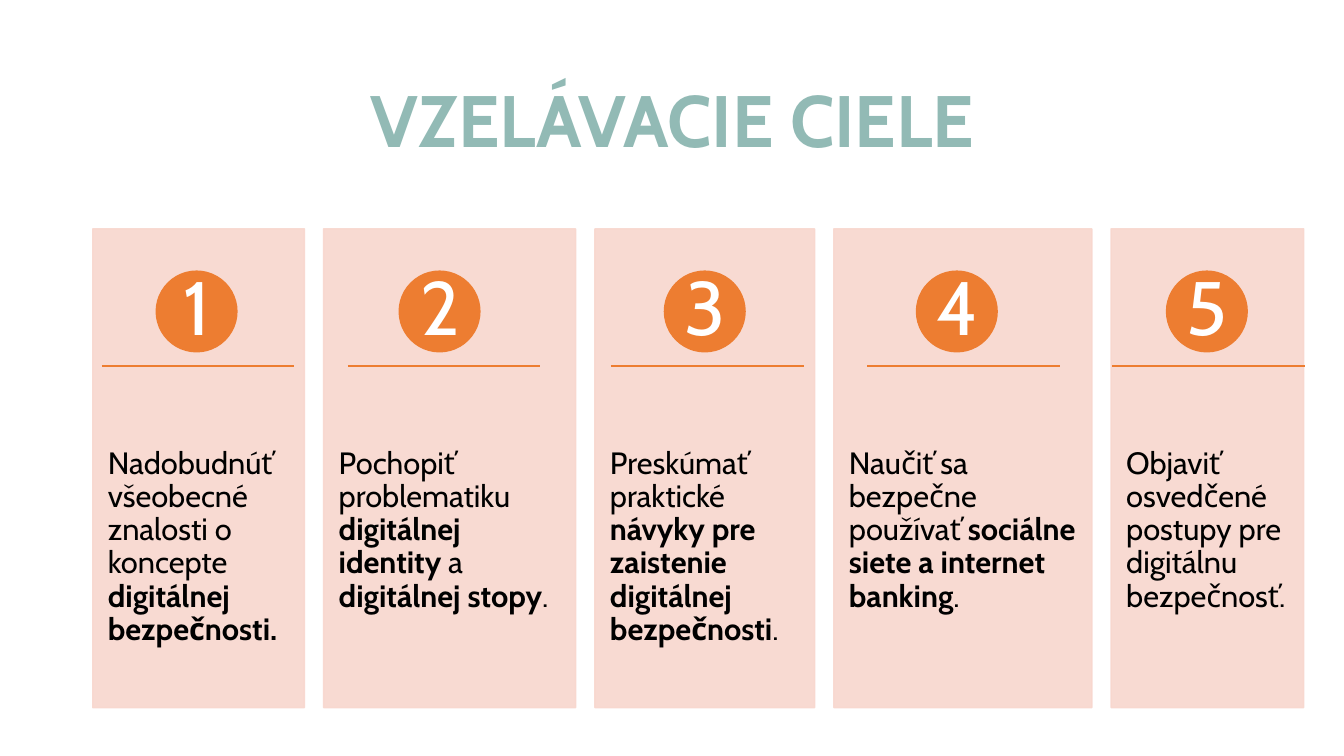
from lxml.etree import SubElement
from pptx import Presentation
from pptx.dml.color import RGBColor
from pptx.enum.shapes import MSO_CONNECTOR, MSO_SHAPE
from pptx.enum.text import MSO_ANCHOR, PP_ALIGN
from pptx.oxml.ns import qn
from pptx.util import Inches, Pt

COLORS = {"title": "92BAB5", "card": "F8D7CE", "accent": "ED7D31",
          "body": "000000", "number": "FFFFFF"}
FONT = "Cabin"
GAP = 0.19

# Left edge of circle and rule, card width, text pieces (every second one bold)
goals = [
    (1.55, 1.01, 2.1, ["Nadobudnúť všeobecné znalosti o koncepte ",
                       "digitálnej bezpečnosti."]),
    (3.96, 3.45, 2.5, ["Pochopiť problematiku ", "digitálnej identity", " a ",
                       "digitálnej stopy", "."]),
    (6.59, 6.06, 2.18, ["Preskúmať praktické ",
                        "návyky pre zaistenie digitálnej bezpečnosti", "."]),
    (9.09, 8.6, 2.56, ["Naučiť sa bezpečne používať ",
                       "sociálne siete a internet banking", "."]),
    (11.57, 11.03, 1.91, ["Objaviť osvedčené postupy pre digitálnu bezpečnosť."]),
]


def write(frame, parts, size, color, align, after, bold=False):
    frame.word_wrap = True
    para = frame.paragraphs[0]
    para.alignment = align
    para.line_spacing = 0.9
    para.space_after = Pt(after)
    for i, part in enumerate(parts):
        run = para.add_run()
        run.text = part
        run.font.name = FONT
        run.font.size = Pt(size)
        run.font.bold = bold or i % 2 == 1
        run.font.color.rgb = RGBColor.from_string(COLORS[color])


def paint(shape, color, alpha=None):
    shape.shadow.inherit = False
    shape.fill.solid()
    shape.line.width = Pt(1)
    for fill in (shape.fill.fore_color, shape.line.color):
        fill.rgb = RGBColor.from_string(COLORS[color])
    if alpha:
        for node in list(shape._element.spPr.iter(qn("a:srgbClr"))):
            SubElement(node, qn("a:alpha")).set("val", str(alpha * 1000))


deck = Presentation()
deck.slide_width, deck.slide_height = Inches(13.33), Inches(7.5)
slide = deck.slides.add_slide(deck.slide_layouts[5])

# Title
title = slide.shapes.title
title.left, title.top = Inches(0.92), Inches(0.61)
title.width, title.height = Inches(11.5), Inches(1.24)
title.text_frame.vertical_anchor = MSO_ANCHOR.MIDDLE
write(title.text_frame, ["VZELÁVACIE CIELE"], 52, "title", PP_ALIGN.CENTER, 6, True)

# Goal cards
cards = slide.shapes.add_group_shape().shapes
left = 0.92
for number, (dot, rule, width, parts) in enumerate(goals, 1):
    card = cards.add_shape(MSO_SHAPE.RECTANGLE, Inches(left), Inches(2.27),
                           Inches(width), Inches(4.75))
    paint(card, "card", 90)

    # Goal text
    body = cards.add_textbox(Inches(left), Inches(4.08),
                             Inches(width), Inches(2.85)).text_frame
    body.margin_left = body.margin_right = Inches(0.15)
    body.margin_top = body.margin_bottom = Inches(0.36)
    write(body, parts, 22, "body", PP_ALIGN.LEFT, 7.7)

    # Numbered circle
    circle = cards.add_shape(MSO_SHAPE.OVAL, Inches(dot), Inches(2.69),
                             Inches(0.8), Inches(0.8))
    paint(circle, "accent")
    label = cards.add_textbox(Inches(dot + 0.12), Inches(2.8),
                              Inches(0.57), Inches(0.57)).text_frame
    label.margin_left = label.margin_right = Inches(0.06)
    label.margin_top = label.margin_bottom = Inches(0.01)
    label.vertical_anchor = MSO_ANCHOR.MIDDLE
    write(label, [str(number)], 54, "number", PP_ALIGN.CENTER, 18.9)

    # Rule under the circle
    line = cards.add_connector(MSO_CONNECTOR.STRAIGHT, Inches(rule), Inches(3.63),
                               Inches(rule + 1.91), Inches(3.63))
    line.line.width = Pt(1)
    line.line.color.rgb = RGBColor.from_string(COLORS["accent"])
    SubElement(line._element.spPr, qn("a:effectLst"))

    left += width + GAP

deck.save("out.pptx")
